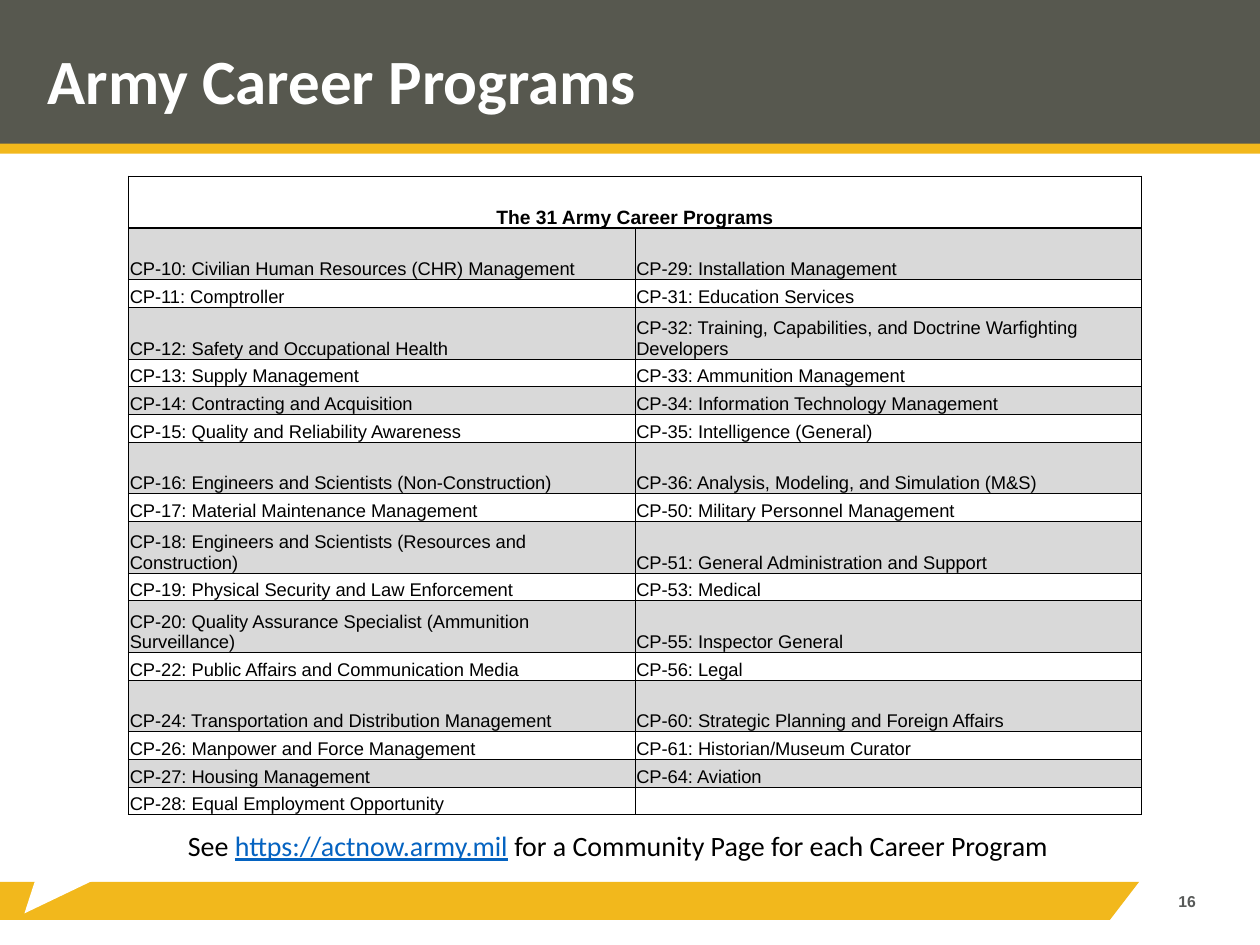
"""Builds a slide listing the Army career programs in a two-column table."""
import pptx
import pptx.dml.color
import pptx.enum.shapes
import pptx.enum.text
import pptx.oxml
import pptx.oxml.ns
import pptx.util

Inches = pptx.util.Inches
Pt = pptx.util.Pt
RGBColor = pptx.dml.color.RGBColor
Anchor = pptx.enum.text.MSO_ANCHOR
Align = pptx.enum.text.PP_ALIGN
Preset = pptx.enum.shapes.MSO_SHAPE

GOLD = RGBColor(0xF2, 0xB8, 0x1C)
OLIVE = RGBColor(0x57, 0x58, 0x4F)
GRAY = RGBColor(0x57, 0x59, 0x58)
BAND = RGBColor(0xD9, 0xD9, 0xD9)
LINK = RGBColor(0x05, 0x63, 0xC1)
WHITE = RGBColor(0xFF, 0xFF, 0xFF)
BLACK = RGBColor(0, 0, 0)

TITLE = "Army Career Programs"
TABLE_HEADING = "The 31 Army Career Programs"
PROGRAMS = [
    ("CP-10: Civilian Human Resources (CHR) Management", "CP-29: Installation Management"),
    ("CP-11: Comptroller", "CP-31: Education Services"),
    ("CP-12: Safety and Occupational Health",
     "CP-32: Training, Capabilities, and Doctrine Warfighting Developers"),
    ("CP-13: Supply Management", "CP-33: Ammunition Management"),
    ("CP-14: Contracting and Acquisition", "CP-34: Information Technology Management"),
    ("CP-15: Quality and Reliability Awareness", "CP-35: Intelligence (General)"),
    ("CP-16: Engineers and Scientists (Non-Construction)",
     "CP-36: Analysis, Modeling, and Simulation (M&S)"),
    ("CP-17: Material Maintenance Management", "CP-50: Military Personnel Management"),
    ("CP-18: Engineers and Scientists (Resources and Construction)",
     "CP-51: General Administration and Support"),
    ("CP-19: Physical Security and Law Enforcement", "CP-53: Medical"),
    ("CP-20: Quality Assurance Specialist (Ammunition Surveillance)", "CP-55: Inspector General"),
    ("CP-22: Public Affairs and Communication Media", "CP-56: Legal"),
    ("CP-24: Transportation and Distribution Management",
     "CP-60: Strategic Planning and Foreign Affairs"),
    ("CP-26: Manpower and Force Management", "CP-61: Historian/Museum Curator"),
    ("CP-27: Housing Management", "CP-64: Aviation"),
    ("CP-28: Equal Employment Opportunity", ""),
]
TALL_ROWS = {0, 1, 3, 7, 9, 11, 13}
TALL, SHORT = 0.41, 0.22
COLUMN_WIDTH = 4.02
FOOTNOTE = [
    ("See ", BLACK, False),
    ("https://actnow.army.mil", LINK, True),
    (" for a Community Page for each Career Program", BLACK, False),
]
FOOTER_BAR = [(0, 7), (9.04, 7), (8.81, 7.3), (0, 7.3)]


def style(font, name, size, color, bold=False):
    font.name, font.size, font.bold = name, Pt(size), bold
    font.color.rgb = color


def paint(shape, color):
    shape.shadow.inherit = False
    shape.fill.solid()
    shape.fill.fore_color.rgb = color
    shape.line.fill.background()


def add_block(slide, preset, box, color):
    shape = slide.shapes.add_shape(preset, *map(Inches, box))
    paint(shape, color)
    return shape


def set_borders(cell, widths):
    properties = cell._tc.get_or_add_tcPr()
    for side, width in zip("LRTB", widths):
        properties.append(pptx.oxml.parse_xml(
            f'<a:ln{side} {pptx.oxml.ns.nsdecls("a")} w="{Pt(width)}"><a:solidFill>'
            f'<a:srgbClr val="{BLACK}"/></a:solidFill></a:ln{side}>'))


def fill_cell(cell, row, column, last_row, text):
    heading = row == 0
    set_borders(cell, [1 if outer else 0.5 for outer in (
        column == 0, heading or column == 1, row <= 1, heading or row == last_row)])
    if row % 2:
        cell.fill.solid()
        cell.fill.fore_color.rgb = BAND
    else:
        cell.fill.background()
    cell.margin_left = cell.margin_right = cell.margin_top = Inches(0.01)
    cell.margin_bottom = 0
    cell.vertical_anchor = Anchor.BOTTOM
    paragraph = cell.text_frame.paragraphs[0]
    paragraph.alignment = Align.CENTER if heading else Align.LEFT
    size = 11 if heading else 10.5
    style(paragraph.font, "Arial", size, BLACK, heading)
    if text:
        paragraph.add_run().text = text
    else:
        paragraph._p.get_or_add_endParaRPr().set("sz", str(int(size * 100)))


def add_program_table(slide):
    rows = [(TABLE_HEADING, "")] + PROGRAMS
    heights = [TALL if index in TALL_ROWS else SHORT for index in range(len(rows))]
    table = slide.shapes.add_table(
        len(rows), 2, Inches(1.02), Inches(1.4),
        Inches(2 * COLUMN_WIDTH), Inches(sum(heights))).table
    table.first_row = table.horz_banding = False
    for column in table.columns:
        column.width = Inches(COLUMN_WIDTH)
    for index, (texts, height) in enumerate(zip(rows, heights)):
        table.rows[index].height = Inches(height)
        for column, text in enumerate(texts):
            fill_cell(table.cell(index, column), index, column, len(rows) - 1, text)
    table.cell(0, 0).merge(table.cell(0, 1))


def add_backdrop(slide):
    builder = slide.shapes.build_freeform(
        *map(Inches, FOOTER_BAR[0]), scale=1.0)
    builder.add_line_segments([tuple(map(Inches, point)) for point in FOOTER_BAR[1:]])
    paint(builder.convert_to_shape(), GOLD)
    notch = add_block(slide, Preset.ISOSCELES_TRIANGLE, (0.33, 6, 1.53, 1.55), WHITE)
    notch.adjustments[0] = 0.932
    notch.rotation = 201.8
    add_block(slide, Preset.RECTANGLE, (0, 0, 10, 1.15), OLIVE)
    add_block(slide, Preset.RECTANGLE, (-0.01, 1.14, 10.01, 0.08), GOLD)


def place_title(slide):
    title = slide.shapes.title
    slide.shapes._spTree.append(title._element)
    title.left, title.top, title.width, title.height = map(Inches, (0.38, 0.24, 8.59, 0.86))
    frame = title.text_frame
    frame.text = TITLE
    frame.auto_size = pptx.enum.text.MSO_AUTO_SIZE.NONE
    frame.vertical_anchor = Anchor.MIDDLE
    frame.margin_left = frame.margin_right = frame.margin_top = frame.margin_bottom = 0
    paragraph = frame.paragraphs[0]
    paragraph.alignment = Align.LEFT
    paragraph.line_spacing = 0.9
    style(paragraph.font, "Calibri", 36, WHITE, True)


def add_text(slide, box, alignment, anchor):
    frame = slide.shapes.add_textbox(*map(Inches, box)).text_frame
    frame.word_wrap = True
    frame.vertical_anchor = anchor
    paragraph = frame.paragraphs[0]
    paragraph.alignment = alignment
    return paragraph


def main():
    presentation = pptx.Presentation()
    presentation.slide_width, presentation.slide_height = Inches(10), Inches(7.5)
    slide = presentation.slides.add_slide(presentation.slide_layouts[5])
    add_backdrop(slide)
    place_title(slide)
    number = add_text(slide, (7.34, 6.95, 2.25, 0.4), Align.RIGHT, Anchor.MIDDLE)
    number.add_run().text = "16"
    style(number.font, "Arial", 9, GRAY, True)
    add_program_table(slide)
    footnote = add_text(slide, (0.83, 6.53, 8.15, 0.64), Align.CENTER, Anchor.TOP)
    for text, color, underline in FOOTNOTE:
        run = footnote.add_run()
        run.text = text
        style(run.font, "Calibri", 16, color)
        run.font.underline = underline
    presentation.save("out.pptx")


if __name__ == "__main__":
    main()
